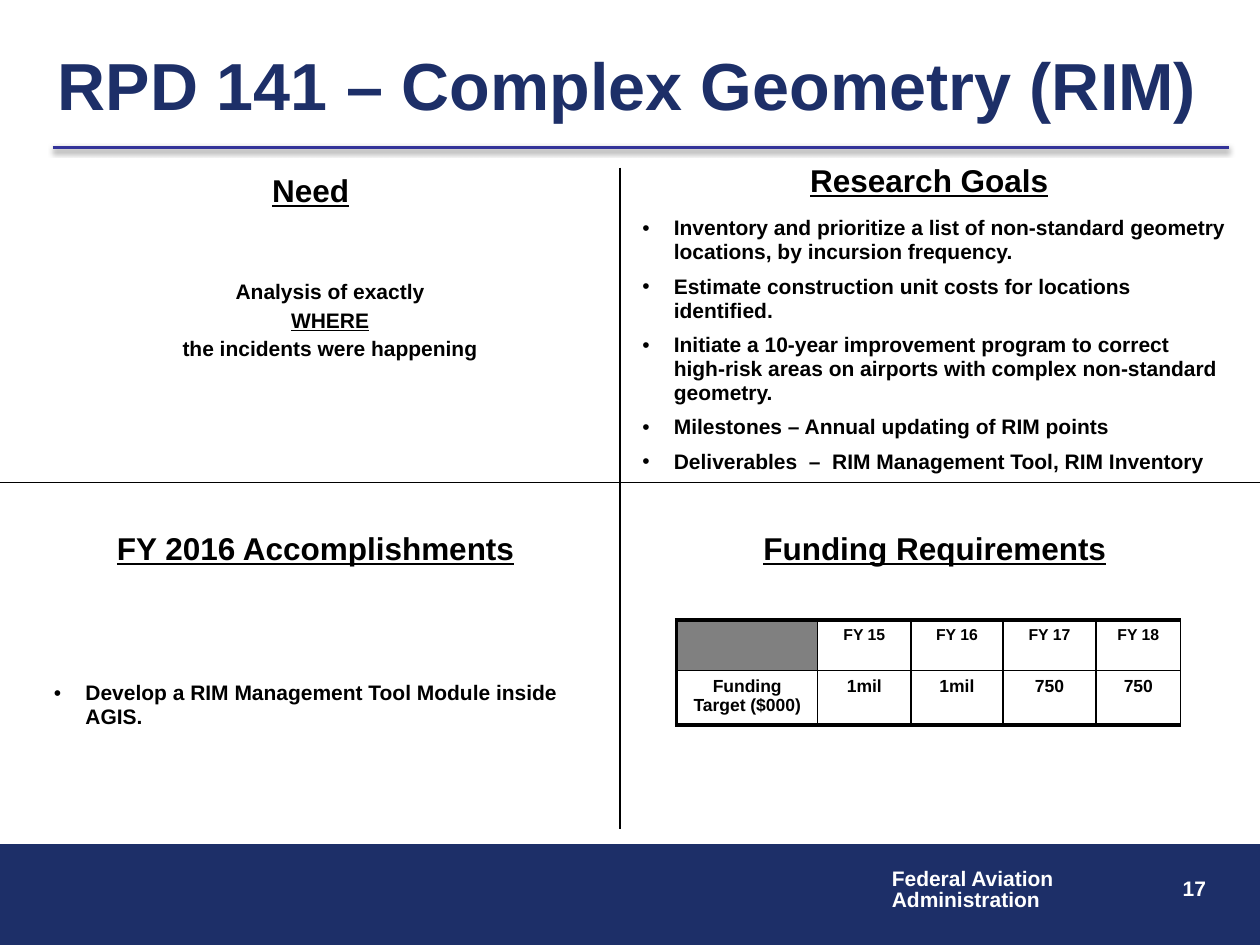
from dataclasses import dataclass
from typing import Optional

from lxml.etree import SubElement
from pptx import Presentation
from pptx.dml.color import RGBColor
from pptx.enum.shapes import MSO_CONNECTOR, MSO_SHAPE
from pptx.enum.text import MSO_ANCHOR, PP_ALIGN
from pptx.oxml.ns import qn
from pptx.util import Emu, Inches, Pt


@dataclass(frozen=True)
class Theme:
    font: str = "Arial"
    navy: str = "1D2F68"
    rule: str = "333399"
    ink: str = "000000"
    white: str = "FFFFFF"
    gray: str = "808080"
    title: float = 38
    head: float = 18
    body: float = 12
    label: float = 9
    cell: float = 10
    thin: float = 1
    thick: float = 2.25


@dataclass(frozen=True)
class Line:
    text: str
    under: bool = False


@dataclass(frozen=True)
class Block:
    left: float
    top: float
    width: float
    height: float
    lines: tuple[Line, ...]
    size: float
    color: str
    align: PP_ALIGN = PP_ALIGN.LEFT
    pitch: float = 0.95
    gap: float = 0
    bullet: bool = False
    wrap: bool = True


@dataclass(frozen=True)
class Stroke:
    start: tuple[float, float]
    end: tuple[float, float]
    color: str
    width: float
    shadow: bool = False


THEME = Theme()


def add_run(para, text: str, size: float, color: str, under: bool = False) -> None:
    run = para.add_run()
    run.text = text
    font = run.font
    font.name, font.size, font.bold = THEME.font, Pt(size), True
    font.color.rgb = RGBColor.from_string(color)
    if under:
        font.underline = True


def add_bullet(para) -> None:
    props = para._p.get_or_add_pPr()
    props.set("marL", str(Inches(0.25)))
    props.set("indent", str(-Inches(0.25)))
    tint = SubElement(props, qn("a:buClr"))
    SubElement(tint, qn("a:srgbClr"), val=THEME.ink)
    SubElement(props, qn("a:buFont"), typeface=THEME.font)
    SubElement(props, qn("a:buChar"), char="•")


def draw_block(slide, block: Block) -> None:
    box = slide.shapes.add_textbox(
        Inches(block.left), Inches(block.top), Inches(block.width), Inches(block.height)
    )
    frame = box.text_frame
    frame.word_wrap = block.wrap
    for i, line in enumerate(block.lines):
        para = frame.add_paragraph() if i else frame.paragraphs[0]
        if block.bullet:
            add_bullet(para)
        para.alignment = block.align
        para.line_spacing = block.pitch
        if i:
            para.space_before = Pt(block.gap)
        add_run(para, line.text, block.size, block.color, line.under)


def draw_stroke(slide, stroke: Stroke) -> None:
    ends = [Inches(n) for n in (*stroke.start, *stroke.end)]
    line = slide.shapes.add_connector(MSO_CONNECTOR.STRAIGHT, *ends)
    line.line.color.rgb = RGBColor.from_string(stroke.color)
    line.line.width = Pt(stroke.width)
    effects = SubElement(line._element.spPr, qn("a:effectLst"))
    if stroke.shadow:
        shade = SubElement(
            effects, qn("a:outerShdw"), blurRad=str(Pt(3.1)), dist=str(Pt(1.6)),
            dir="5400000", rotWithShape="0",
        )
        tint = SubElement(shade, qn("a:srgbClr"), val=THEME.ink)
        SubElement(tint, qn("a:alpha"), val="38000")


def set_border(cell, side: str, width: float) -> None:
    props = cell._tc.get_or_add_tcPr()
    edge = SubElement(props, qn(f"a:{side}"), w=str(Pt(width)))
    fill = SubElement(edge, qn("a:solidFill"))
    SubElement(fill, qn("a:srgbClr"), val=THEME.ink)


def fill_cell(cell, text: str, row: int, col: int, last: int) -> None:
    widths = {
        "lnL": THEME.thin if col else THEME.thick,
        "lnR": THEME.thin,
        "lnT": THEME.thin if row else THEME.thick,
        "lnB": THEME.thick if row == last else THEME.thin,
    }
    for side, width in widths.items():
        set_border(cell, side, width)
    if text:
        cell.fill.background()
        para = cell.text_frame.paragraphs[0]
        para.alignment = PP_ALIGN.CENTER
        add_run(para, text, THEME.cell if row else THEME.label, THEME.ink)
    else:
        cell.fill.solid()
        cell.fill.fore_color.rgb = RGBColor.from_string(THEME.gray)


def draw_table(slide, rows: list[list[str]], cols: list[float], heights: list[float]) -> None:
    frame = slide.shapes.add_table(
        len(rows), len(cols), Inches(5.37), Inches(4.92),
        Inches(sum(cols)), Inches(sum(heights)),
    )
    table = frame.table
    table.first_row = table.horz_banding = False
    for col, width in zip(table.columns, cols):
        col.width = Inches(width)
    for r, (texts, height) in enumerate(zip(rows, heights)):
        table.rows[r].height = Inches(height)
        for c, text in enumerate(texts):
            fill_cell(table.cell(r, c), text, r, c, len(rows) - 1)


def draw_title(slide, text: str) -> None:
    title = slide.shapes.title
    title.left, title.top = Inches(0.36), Inches(0.33)
    title.width, title.height = Inches(9.27), Inches(0.67)
    frame = title.text_frame
    frame.word_wrap = True
    frame.vertical_anchor = MSO_ANCHOR.MIDDLE
    para = frame.paragraphs[0]
    para.alignment = PP_ALIGN.LEFT
    add_run(para, text, THEME.title, THEME.navy)


def draw_band(slide, width: Emu) -> None:
    band = slide.shapes.add_shape(MSO_SHAPE.RECTANGLE, 0, Inches(6.7), width, Inches(0.8))
    band.shadow.inherit = False
    band.fill.solid()
    band.fill.fore_color.rgb = band.line.color.rgb = RGBColor.from_string(THEME.navy)
    band.line.width = Pt(0.75)


def lines(*texts: str) -> tuple[Line, ...]:
    return tuple(Line(text) for text in texts)


def head(left: float, top: float, width: float, text: str,
         align: Optional[PP_ALIGN] = PP_ALIGN.CENTER) -> Block:
    return Block(left, top, width, 0.38, (Line(text, True),), THEME.head, THEME.ink, align)


def main() -> None:
    deck = Presentation()
    deck.slide_width, deck.slide_height = Inches(10), Inches(7.5)
    slide = deck.slides.add_slide(deck.slide_layouts[5])
    draw_title(slide, "RPD 141 – Complex Geometry (RIM)")
    draw_band(slide, deck.slide_width)
    goals = lines(
        "Inventory and prioritize a list of non-standard geometry locations, by incursion frequency.",
        "Estimate construction unit costs for locations identified.",
        "Initiate a 10-year improvement program to correct high-risk areas on airports with complex non-standard geometry.",
        "Milestones – Annual updating of RIM points",
        "Deliverables  –  RIM Management Tool, RIM Inventory",
    )
    need = (Line("Analysis of exactly"), Line("WHERE", True), Line("the incidents were happening"))
    done = lines("Develop a RIM Management Tool Module inside AGIS.")
    agency = lines("Federal Aviation", "Administration")
    body, ink, white = THEME.body, THEME.ink, THEME.white
    for block in (
        Block(7.59, 6.9, 2.08, 0.5, lines("17"), body, white, PP_ALIGN.RIGHT, 1),
        Block(6.98, 6.85, 1.5, 0.44, agency, body, white, pitch=0.85, wrap=False),
        head(0.83, 4.17, 4.17, "FY 2016 Accomplishments", PP_ALIGN.LEFT),
        head(5.25, 1.25, 4.25, "Research Goals"),
        head(5.21, 4.17, 4.42, "Funding Requirements"),
        head(0.55, 1.33, 3.83, "Need"),
        Block(5, 1.67, 4.83, 2.23, goals, body, ink, gap=6, bullet=True),
        Block(0.33, 2.18, 4.58, 0.77, need, body, ink, PP_ALIGN.CENTER, gap=2.4),
        Block(0.33, 5.36, 4.58, 0.5, done, body, ink, bullet=True),
    ):
        draw_block(slide, block)
    for stroke in (
        Stroke((4.92, 1.33), (4.92, 6.58), ink, 0.75),
        Stroke((0, 3.83), (10, 3.83), ink, 0.75),
        Stroke((0.42, 1.17), (9.75, 1.17), THEME.rule, 2, True),
    ):
        draw_stroke(slide, stroke)
    rows = [
        ["", "FY 15", "FY 16", "FY 17", "FY 18"],
        ["Funding Target ($000)", "1mil", "1mil", "750", "750"],
    ]
    draw_table(slide, rows, [1.12, 0.74, 0.73, 0.74, 0.67], [0.4, 0.43])
    deck.save("out.pptx")


if __name__ == "__main__":
    main()
